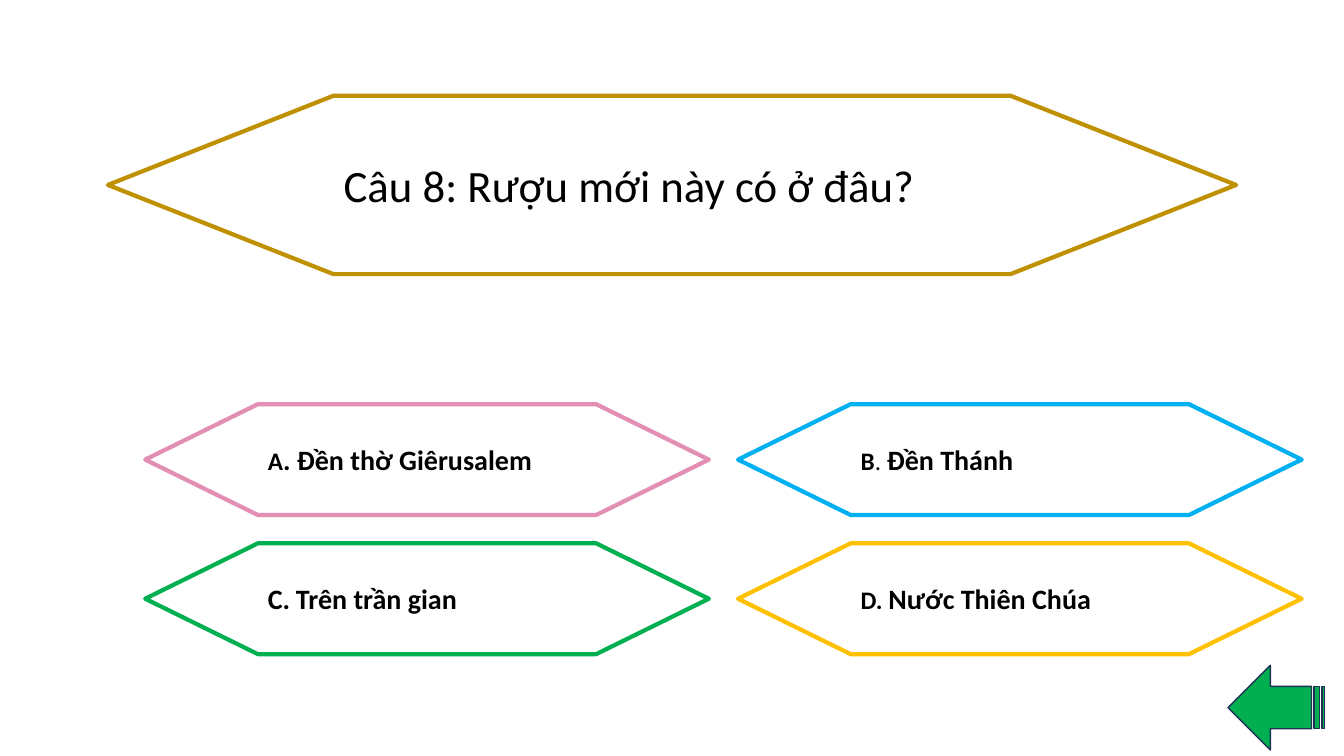
from dataclasses import dataclass

from pptx import Presentation
from pptx.dml.color import RGBColor
from pptx.enum.shapes import MSO_SHAPE
from pptx.enum.text import MSO_ANCHOR, MSO_AUTO_SIZE, PP_ALIGN
from pptx.util import Inches, Pt


@dataclass(frozen=True)
class Theme:
    font: str = "Calibri"
    text: str = "000000"
    white: str = "FFFFFF"
    gold: str = "BF9000"
    pink: str = "E28FB3"
    blue: str = "00B0F0"
    green: str = "00B050"
    amber: str = "FFC000"
    navy: str = "1E3256"
    question_size: int = 32
    answer_size: int = 20
    letter_size: int = 18
    frame_width: int = 3
    arrow_line_width: int = 1


THEME = Theme()

ANSWER_LEFT, ANSWER_TOP = 1.44, 4.01
ANSWER_WIDTH, ANSWER_HEIGHT = 5.59, 1.1
COLUMN_STEP, ROW_STEP = 5.88, 1.38

LETTER, ANSWER = THEME.letter_size, THEME.answer_size
# Each answer: frame colour, fill colour, alignment, runs of (text, size, bold)
ANSWERS = [
    (THEME.pink, None, PP_ALIGN.JUSTIFY,
     [("A", LETTER, True), (". Đền thờ Giêrusalem", ANSWER, True)]),
    (THEME.blue, None, PP_ALIGN.JUSTIFY,
     [("B", LETTER, True), (". ", LETTER, False), ("Đền Thánh", ANSWER, True)]),
    (THEME.green, None, PP_ALIGN.JUSTIFY,
     [("C.", ANSWER, True), (" ", LETTER, True), ("Trên trần gian", ANSWER, True)]),
    (THEME.amber, THEME.white, PP_ALIGN.LEFT,
     [("D. ", LETTER, True), ("Nước Thiên Chúa", ANSWER, True)]),
]


def set_attributes(target, values):
    for name, value in values.items():
        setattr(target, name, value)


def add_outlined(slide, preset, box, line_color, line_width, fill_color=None):
    outlined = slide.shapes.add_shape(preset, *map(Inches, box))
    outlined.shadow.inherit = False
    if fill_color:
        outlined.fill.solid()
        outlined.fill.fore_color.rgb = RGBColor.from_string(fill_color)
    else:
        outlined.fill.background()
    outlined.line.color.rgb = RGBColor.from_string(line_color)
    outlined.line.width = Pt(line_width)
    return outlined


def add_frame(slide, box, line_color, fill_color=None):
    return add_outlined(slide, MSO_SHAPE.FLOWCHART_PREPARATION, box,
                        line_color, THEME.frame_width, fill_color)


def write_line(frame, runs, alignment):
    """Fill a text frame with one paragraph of (text, size, bold) runs."""
    set_attributes(frame, {"word_wrap": True,
                           "auto_size": MSO_AUTO_SIZE.NONE,
                           "vertical_anchor": MSO_ANCHOR.MIDDLE})
    line = frame.paragraphs[0]
    line.alignment = alignment
    for text, size, bold in runs:
        run = line.add_run()
        run.text = text
        set_attributes(run.font, {"name": THEME.font, "size": Pt(size), "bold": bold})
        run.font.color.rgb = RGBColor.from_string(THEME.text)


def add_question(slide, text):
    """Frame the question and place the title in the frame's text area."""
    left, top, width, height = 1.07, 0.95, 11.19, 1.77
    add_frame(slide, (left, top, width, height), THEME.gold)
    title = slide.shapes.title
    set_attributes(title, {"left": Inches(left + width / 5), "top": Inches(top),
                           "width": Inches(width * 3 / 5), "height": Inches(height)})
    write_line(title.text_frame, [(text, THEME.question_size, False)], PP_ALIGN.JUSTIFY)
    slide.shapes._spTree.append(title._element)  # bring the title in front of its frame


def add_answers(slide):
    for index, (line_color, fill_color, alignment, runs) in enumerate(ANSWERS):
        row, column = divmod(index, 2)
        box = (ANSWER_LEFT + column * COLUMN_STEP, ANSWER_TOP + row * ROW_STEP,
               ANSWER_WIDTH, ANSWER_HEIGHT)
        answer = add_frame(slide, box, line_color, fill_color)
        write_line(answer.text_frame, runs, alignment)


def add_back_arrow(slide):
    arrow = add_outlined(slide, MSO_SHAPE.STRIPED_RIGHT_ARROW, (12.18, 6.6, 0.96, 0.84),
                         THEME.navy, THEME.arrow_line_width, THEME.green)
    arrow._element.spPr.xfrm.set("flipH", "1")


def main():
    presentation = Presentation()
    set_attributes(presentation, {"slide_width": Inches(13.33),
                                  "slide_height": Inches(7.5)})
    slide = presentation.slides.add_slide(presentation.slide_layouts[5])
    add_question(slide, "Câu 8: Rượu mới này có ở đâu?")
    add_answers(slide)
    add_back_arrow(slide)
    presentation.save("out.pptx")


if __name__ == "__main__":
    main()
